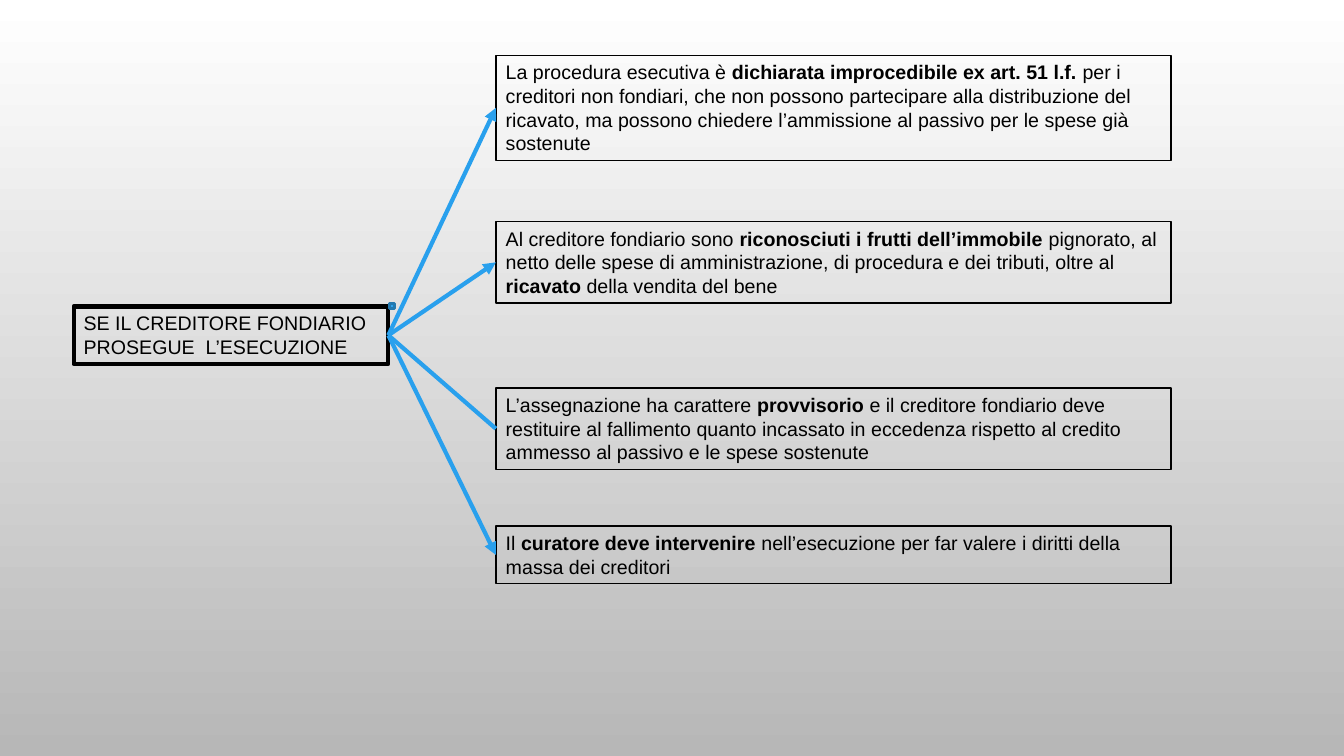
import pptx
import pptx.util
import pptx.dml.color
import pptx.enum.shapes
import pptx.enum.text
import pptx.oxml
import pptx.oxml.ns

Pt = pptx.util.Pt
RGBColor = pptx.dml.color.RGBColor
RECT = pptx.enum.shapes.MSO_SHAPE.RECTANGLE
LINE = pptx.enum.shapes.MSO_CONNECTOR.STRAIGHT
BLACK = RGBColor(0, 0, 0)
WHITE = RGBColor(255, 255, 255)
GREY = RGBColor(0xB7, 0xB7, 0xB7)
ARROW = RGBColor(0x29, 0xA0, 0xED)
DOT = RGBColor(0x2F, 0xA3, 0xEE)
EDGE = RGBColor(0x23, 0x79, 0xB0)
LEFT, RIGHT = 1, 3
ROW, PAD = 16.95, 7.2

CAUSE = "SE IL CREDITORE FONDIARIO PROSEGUE  L’ESECUZIONE"
EFFECTS = [
    (0, 4, True, "La procedura esecutiva è *dichiarata improcedibile ex art. 51 l.f. *per i creditori non fondiari, che non possono partecipare alla distribuzione del ricavato, ma possono chiedere l’ammissione al passivo per le spese già sostenute"),
    (118.8, 3, True, "Al creditore fondiario sono *riconosciuti i frutti dell’immobile *pignorato, al netto delle spese di amministrazione, di procedura e dei tributi, oltre al *ricavato *della vendita del bene"),
    (237.6, 3, False, "L’assegnazione ha carattere *provvisorio* e il creditore fondiario deve restituire al fallimento quanto incassato in eccedenza rispetto al credito ammesso al passivo e le spese sostenute"),
    (336.24, 2, True, "Il *curatore deve intervenire* nell’esecuzione per far valere i diritti della massa dei creditori"),
]


def write(shape, text, size=14, font="Arial", color=BLACK):
    frame = shape.text_frame
    frame.word_wrap = True
    frame.vertical_anchor = pptx.enum.text.MSO_ANCHOR.TOP
    para = frame.paragraphs[0]
    para.alignment = pptx.enum.text.PP_ALIGN.LEFT
    for i, part in enumerate(text.split("*")):
        run = para.add_run()
        run.text = part
        run.font.name = font
        run.font.size = Pt(size)
        run.font.bold = i % 2 == 1
        run.font.color.rgb = color


def block(slide, x, y, w, h, edge=BLACK, width=1, fill=None):
    shape = slide.shapes.add_shape(RECT, Pt(x), Pt(y), Pt(w), Pt(h))
    shape.shadow.inherit = False
    if fill is None:
        shape.fill.background()
    else:
        shape.fill.solid()
        shape.fill.fore_color.rgb = fill
    shape.line.color.rgb = edge
    shape.line.width = Pt(width)
    return shape


def link(slide, start, end, head):
    line = slide.shapes.add_connector(LINE, 0, 0, 0, 0)
    line.begin_connect(start, RIGHT)
    line.end_connect(end, LEFT)
    line.line.color.rgb = ARROW
    line.line.width = Pt(3)
    if head:
        tail = pptx.oxml.ns.qn("a:tailEnd")
        line.line._get_or_add_ln().append(
            line.line._get_or_add_ln().makeelement(tail, {"type": "triangle"}))
    props = line._element.spPr
    props.append(props.makeelement(pptx.oxml.ns.qn("a:effectLst"), {}))


def cause(slide, x, y, w):
    shape = block(slide, x, y, w, 2 * ROW + PAD, width=3)
    write(shape, CAUSE)
    block(slide, x + w + 0.6, y - 2.1, 3.6, 3.6, EDGE, 2, DOT)
    return shape


def effects(slide, x, y, w, start):
    for down, rows, head, text in EFFECTS:
        shape = block(slide, x, y + down, w, rows * ROW + PAD)
        write(shape, text)
        link(slide, start, shape, head)


def shade(slide):
    fill = slide.background.fill
    fill.gradient()
    fill.gradient_angle = 270
    for stop, place, color in zip(fill.gradient_stops, (0, 1), (WHITE, GREY)):
        stop.position = place
        stop.color.rgb = color


def main():
    deck = pptx.Presentation()
    deck.slide_width, deck.slide_height = Pt(960), Pt(540)
    slide = deck.slides.add_slide(deck.slide_layouts[6])
    shade(slide)
    start = cause(slide, 52.6, 218.9, 224.8)
    effects(slide, 354.2, 39.6, 482.4, start)
    deck.save("out.pptx")


if __name__ == "__main__":
    main()
